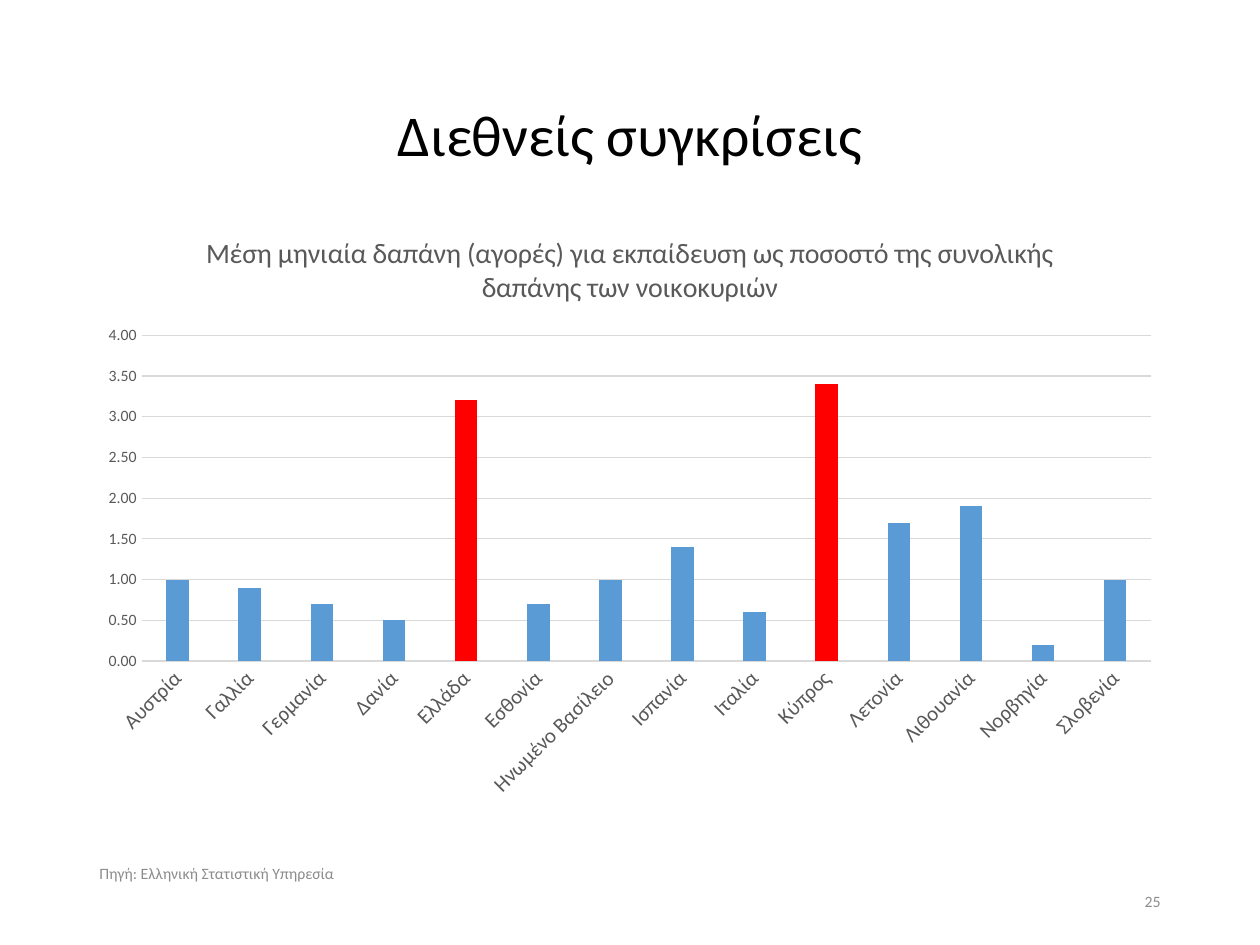
from pptx import Presentation
from pptx.chart.data import CategoryChartData
from pptx.dml.color import RGBColor
from pptx.enum.chart import XL_CHART_TYPE, XL_TICK_MARK
from pptx.enum.text import MSO_ANCHOR, PP_ALIGN
from pptx.util import Pt

BLACK = RGBColor(0x00, 0x00, 0x00)
DARK_GREY = RGBColor(0x59, 0x59, 0x59)
MID_GREY = RGBColor(0x8C, 0x8C, 0x8C)
LIGHT_GREY = RGBColor(0xD9, 0xD9, 0xD9)
BLUE = RGBColor(0x5B, 0x9B, 0xD5)
RED = RGBColor(0xFF, 0x00, 0x00)

LEFT, WIDTH = Pt(49.7), Pt(620.6)
HIGHLIGHTED = ("Ελλάδα", "Κύπρος")
EDUCATION_SHARE = {
    "Αυστρία": 1.0,
    "Γαλλία": 0.9,
    "Γερμανία": 0.7,
    "Δανία": 0.5,
    "Ελλάδα": 3.2,
    "Εσθονία": 0.7,
    "Ηνωμένο Βασίλειο": 1.0,
    "Ισπανία": 1.4,
    "Ιταλία": 0.6,
    "Κύπρος": 3.4,
    "Λετονία": 1.7,
    "Λιθουανία": 1.9,
    "Νορβηγία": 0.2,
    "Σλοβενία": 1.0,
}


def set_font(font, size, color):
    for attribute, value in {"name": "Calibri", "size": Pt(size), "bold": False}.items():
        setattr(font, attribute, value)
    font.color.rgb = color


def write_line(shape, text, size, color, align):
    """Fill a shape with one vertically centred paragraph."""
    frame = shape.text_frame
    frame.word_wrap = True
    frame.vertical_anchor = MSO_ANCHOR.MIDDLE
    paragraph = frame.paragraphs[0]
    paragraph.alignment = align
    run = paragraph.add_run()
    run.text = text
    set_font(run.font, size, color)
    return paragraph


presentation = Presentation()
presentation.slide_width, presentation.slide_height = Pt(720), Pt(540)
slide = presentation.slides.add_slide(presentation.slide_layouts[5])

# Title
heading = slide.shapes.title
heading.left, heading.top, heading.width, heading.height = LEFT, Pt(54), WIDTH, Pt(49)
write_line(heading, "Διεθνείς συγκρίσεις", 33, BLACK, PP_ALIGN.CENTER).line_spacing = 0.9

# Spending chart
share_data = CategoryChartData(number_format="#,##0.00")
share_data.categories = list(EDUCATION_SHARE)
share_data.add_series("Series 1", list(EDUCATION_SHARE.values()))
chart = slide.shapes.add_chart(
    XL_CHART_TYPE.COLUMN_CLUSTERED, LEFT, Pt(120.2), WIDTH, Pt(342), share_data
).chart
set_font(chart.font, 10, BLACK)
chart.has_legend = False
chart.has_title = True
caption = chart.chart_title.text_frame.paragraphs[0].add_run()
caption.text = (
    "Μέση μηνιαία δαπάνη (αγορές) για εκπαίδευση ως ποσοστό "
    "της συνολικής δαπάνης των νοικοκυριών"
)
set_font(caption.font, 16, DARK_GREY)
chart.chart_title.include_in_layout = False

countries, shares = chart.category_axis, chart.value_axis
for axis, label_size in ((countries, 12), (shares, 9)):
    axis.major_tick_mark = axis.minor_tick_mark = XL_TICK_MARK.NONE
    set_font(axis.tick_labels.font, label_size, DARK_GREY)
shares.minimum_scale, shares.maximum_scale, shares.major_unit = 0, 4, 0.5
shares.tick_labels.number_format = "#,##0.00"
shares.tick_labels.number_format_is_linked = False
shares.format.line.fill.background()
for line in (countries.format.line, shares.major_gridlines.format.line):
    line.color.rgb = LIGHT_GREY
    line.width = Pt(0.75)
countries.tick_labels.font._element.getparent().getparent().getparent().bodyPr.set("rot", "-2700000")

columns = chart.plots[0]
columns.gap_width, columns.overlap, columns.vary_by_categories = 219, -27, False
spending = columns.series[0]
spending.invert_if_negative = False
spending.format.fill.solid()
spending.format.fill.fore_color.rgb = BLUE
for position, country in enumerate(EDUCATION_SHARE):
    if country in HIGHLIGHTED:
        highlight = spending.points[position].format.fill
        highlight.solid()
        highlight.fore_color.rgb = RED

# Footer
for text, left, top, width, align in (
    ("25", 508.3, 500.4, 162, PP_ALIGN.RIGHT),
    ("Πηγή: Ελληνική Στατιστική Υπηρεσία", 49.7, 484.6, 250.6, PP_ALIGN.LEFT),
):
    note = slide.shapes.add_textbox(Pt(left), Pt(top), Pt(width), Pt(28.8))
    write_line(note, text, 9, MID_GREY, align)

presentation.save("out.pptx")
